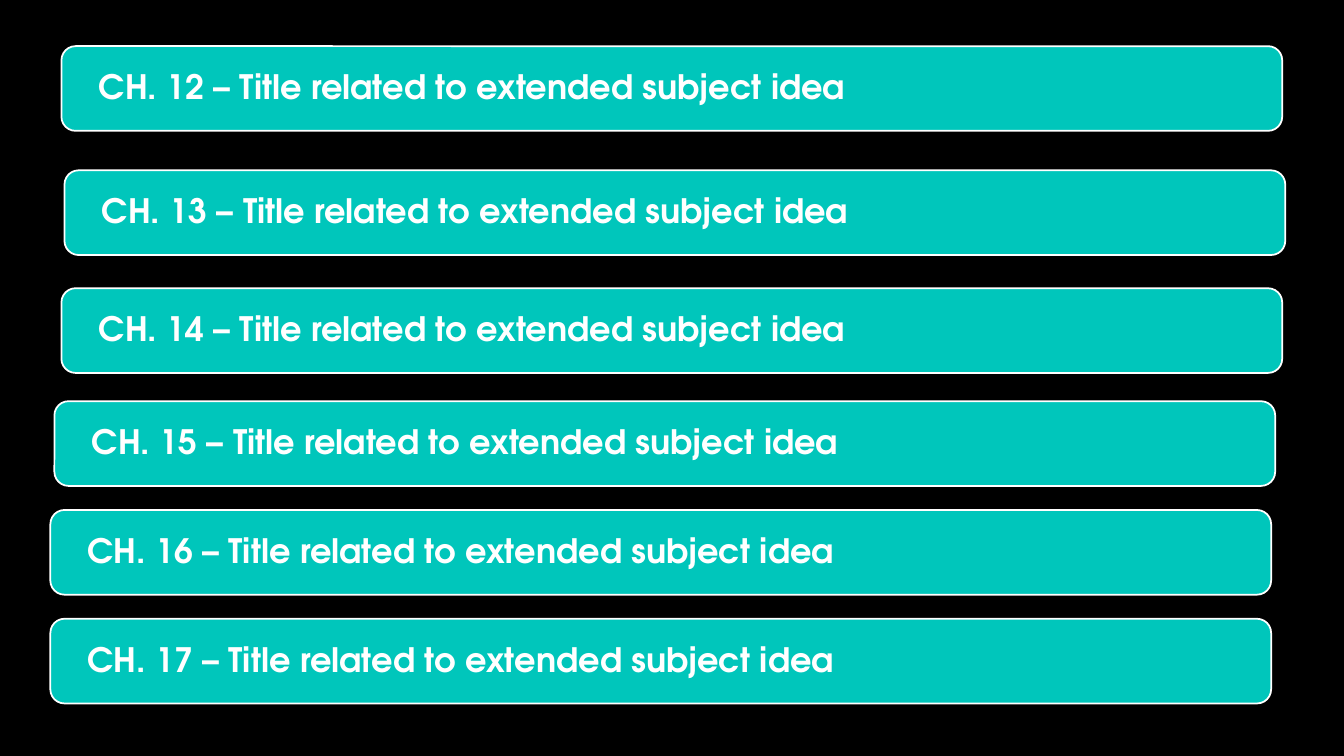
from dataclasses import dataclass

from pptx import Presentation
from pptx.dml.color import RGBColor
from pptx.enum.shapes import MSO_SHAPE
from pptx.enum.text import MSO_ANCHOR, PP_ALIGN
from pptx.util import Pt


@dataclass(frozen=True)
class Theme:
    background = RGBColor(0x00, 0x00, 0x00)
    bar = RGBColor(0x00, 0xC6, 0xBB)
    light = RGBColor(0xFF, 0xFF, 0xFF)
    font = "TeX Gyre Adventor"
    size = Pt(24)
    outline = Pt(1.25)


theme = Theme()

# Slide
prs = Presentation()
prs.slide_width, prs.slide_height = Pt(960), Pt(540)
s = prs.slides.add_slide(prs.slide_layouts[6])
s.background.fill.solid()
s.background.fill.fore_color.rgb = theme.background

# Chapter bars: number, left and top in points
BAR_WIDTH, BAR_HEIGHT = 872, 60.5
INSET = 2.9
chapters = [
    (12, 43.9, 33),
    (13, 46.1, 121.7),
    (14, 43.9, 205.9),
    (15, 38.9, 286.6),
    (16, 36, 364.3),
    (17, 36, 442),
]

for number, left, top in chapters:
    group = s.shapes.add_group_shape()

    # Rounded bar
    sp = group.shapes.add_shape(MSO_SHAPE.ROUNDED_RECTANGLE, Pt(left), Pt(top),
                                Pt(BAR_WIDTH), Pt(BAR_HEIGHT))
    sp.shadow.inherit = False
    sp.fill.solid()
    sp.fill.fore_color.rgb = theme.bar
    sp.line.color.rgb = theme.light
    sp.line.width = theme.outline

    # Chapter title
    label = group.shapes.add_textbox(Pt(left + INSET), Pt(top + INSET),
                                     Pt(BAR_WIDTH - 2 * INSET),
                                     Pt(BAR_HEIGHT - 2 * INSET))
    tf = label.text_frame
    tf.word_wrap = True
    tf.vertical_anchor = MSO_ANCHOR.MIDDLE
    tf.margin_left = tf.margin_right = Pt(23.8)
    tf.margin_top = tf.margin_bottom = Pt(0)
    p = tf.paragraphs[0]
    p.text = f"CH. {number} – Title related to extended subject idea"
    p.alignment = PP_ALIGN.LEFT
    p.line_spacing = 0.9
    p.font.name = theme.font
    p.font.size = theme.size
    p.font.bold = True
    p.font.color.rgb = theme.light

prs.save("out.pptx")
